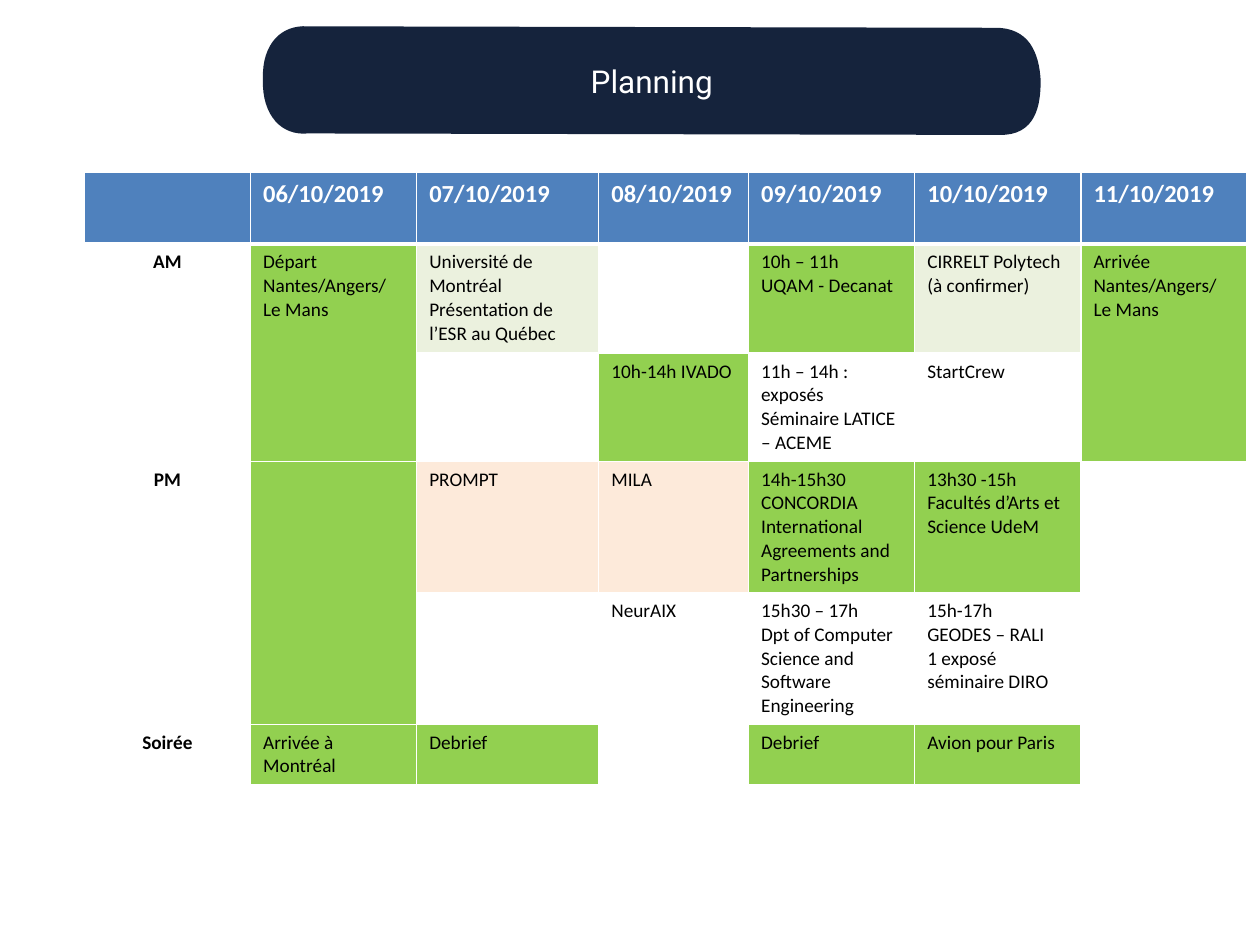
from lxml.etree import SubElement
from pptx import Presentation
from pptx.dml.color import RGBColor
from pptx.enum.text import MSO_ANCHOR, PP_ALIGN
from pptx.oxml.ns import qn
from pptx.util import Cm, Pt

THEME = {
    "navy": "15233C", "header": "4F81BD", "white": "FFFFFF", "black": "000000",
    "confirmed": "92D050", "tentative": "EBF1DE", "proposed": "FDEADA",
    "title_font": "Roboto", "table_font": "Calibri",
    "title_size": 18, "header_size": 14, "body_size": 11,
}

# Content
TITLE = "Planning"
DATES = [f"{day:02}/10/2019" for day in range(6, 12)]
PERIODS = {1: "AM", 3: "PM", 5: "Soirée"}  # first table row: label
# (row, column, status, paragraphs)
EVENTS = [
    (1, 1, "confirmed", ["Départ Nantes/Angers/", "Le Mans"]),
    (1, 2, "tentative", ["Université de Montréal", "Présentation de l’ESR au Québec"]),
    (1, 4, "confirmed", ["10h – 11h", "UQAM - Decanat"]),
    (1, 5, "tentative", ["CIRRELT Polytech", "(à confirmer)"]),
    (1, 6, "confirmed", ["Arrivée Nantes/Angers/", "Le Mans"]),
    (2, 3, "confirmed", ["10h-14h IVADO"]),
    (2, 4, None, ["11h – 14h : exposés Séminaire LATICE – ACEME"]),
    (2, 5, None, ["StartCrew"]),
    (3, 1, "confirmed", []),
    (3, 2, "proposed", ["PROMPT"]),
    (3, 3, "proposed", ["MILA"]),
    (3, 4, "confirmed", ["14h-15h30", "CONCORDIA", "International Agreements and Partnerships"]),
    (3, 5, "confirmed", ["13h30 -15h Facultés d’Arts et Science UdeM"]),
    (4, 3, None, ["NeurAIX"]),
    (4, 4, None, ["15h30 – 17h", "Dpt of Computer Science and Software Engineering"]),
    (4, 5, None, ["15h-17h", "GEODES – RALI", "1 exposé séminaire DIRO"]),
    (5, 1, "confirmed", ["Arrivée à Montréal"]),
    (5, 2, "confirmed", ["Debrief"]),
    (5, 4, "confirmed", ["Debrief"]),
    (5, 5, "confirmed", ["Avion pour Paris"]),
]
TWO_ROW_CELLS = [(1, 0), (1, 1), (1, 6), (3, 0), (3, 1)]

# Geometry in centimetres
COLUMN_WIDTHS = [3.35, 3.35, 3.67, 3.02, 3.35, 3.35, 3.35]
ROW_HEIGHTS = [1.44, 2.2, 2.18, 2.64, 2.64, 1.2]
TABLE_LEFT, TABLE_TOP = 1.7, 3.48
BANNER_START = (5.3, 1.6)
# One point is a straight side, three points are a Bézier curve
BANNER_SIDES = [
    [(5.28, 0.86), (5.69, 0.5), (6.2, 0.53)],
    [(20.07, 0.56)],
    [(20.73, 0.56), (20.95, 1.04), (20.98, 1.63)],
    [(20.98, 2.13), (20.88, 2.74), (20.14, 2.72)],
    [(6.2, 2.69)],
    [(5.69, 2.74), (5.28, 2.34), BANNER_START],
]
CURVE_STEPS = 16


def color(name):
    return RGBColor.from_string(THEME[name])


def write(paragraph, text, font, size, color_name, bold=False):
    run = paragraph.add_run()
    run.text = text
    run.font.name = THEME[font]
    run.font.size = Pt(THEME[size])
    run.font.color.rgb = color(color_name)
    run.font.bold = bold


def outline_points(start, sides):
    points = [start]
    for side in sides:
        if len(side) == 1:
            points += side
            continue
        corners = [points[-1], *side]
        for step in range(1, CURVE_STEPS + 1):
            t = step / CURVE_STEPS
            weights = ((1 - t) ** 3, 3 * t * (1 - t) ** 2, 3 * t * t * (1 - t), t ** 3)
            points.append(tuple(
                sum(weight * corner[axis] for weight, corner in zip(weights, corners))
                for axis in (0, 1)))
    return [(Cm(x), Cm(y)) for x, y in points]


def add_banner(slide):
    first, *others = outline_points(BANNER_START, BANNER_SIDES)
    builder = slide.shapes.build_freeform(*first)
    builder.add_line_segments(others, close=True)
    shape = builder.convert_to_shape()
    shape.shadow.inherit = False
    shape.fill.solid()
    shape.fill.fore_color.rgb = color("navy")
    shape.line.fill.background()
    shape.text_frame.vertical_anchor = MSO_ANCHOR.MIDDLE
    paragraph = shape.text_frame.paragraphs[0]
    paragraph.alignment = PP_ALIGN.CENTER
    write(paragraph, TITLE, "title_font", "title_size", "white")


def set_borders(cell, top, bottom):
    properties = cell._tc.get_or_add_tcPr()
    for side, width in (("L", 1), ("R", 1), ("T", top), ("B", bottom)):
        line = SubElement(properties, qn(f"a:ln{side}"), w=str(Pt(width)))
        fill = SubElement(line, qn("a:solidFill"))
        SubElement(fill, qn("a:srgbClr"), val=THEME["white"])


def add_planning(slide):
    frame = slide.shapes.add_table(
        len(ROW_HEIGHTS), len(COLUMN_WIDTHS), Cm(TABLE_LEFT), Cm(TABLE_TOP),
        Cm(sum(COLUMN_WIDTHS)), Cm(sum(ROW_HEIGHTS)))
    table = frame.table
    table.horz_banding = False
    for column, width in zip(table.columns, COLUMN_WIDTHS):
        column.width = Cm(width)
    for row, height in zip(table.rows, ROW_HEIGHTS):
        row.height = Cm(height)

    # Cell borders and base fills
    for row_index, row in enumerate(table.rows):
        for cell in row.cells:
            set_borders(cell, 3 if row_index == 1 else 1, 3 if row_index == 0 else 1)
            if row_index == 0:
                cell.fill.solid()
                cell.fill.fore_color.rgb = color("header")
            else:
                cell.fill.background()
    for row_index, column_index in TWO_ROW_CELLS:
        table.cell(row_index, column_index).merge(table.cell(row_index + 1, column_index))

    # Dates and periods
    for column_index, date in enumerate(DATES, start=1):
        paragraph = table.cell(0, column_index).text_frame.paragraphs[0]
        write(paragraph, date, "table_font", "header_size", "white", bold=True)
    for row_index, label in PERIODS.items():
        paragraph = table.cell(row_index, 0).text_frame.paragraphs[0]
        paragraph.alignment = PP_ALIGN.CENTER
        write(paragraph, label, "table_font", "body_size", "black", bold=True)

    # Events
    for row_index, column_index, status, lines in EVENTS:
        cell = table.cell(row_index, column_index)
        if status:
            cell.fill.solid()
            cell.fill.fore_color.rgb = color(status)
        text_frame = cell.text_frame
        for number, line in enumerate(lines):
            paragraph = text_frame.add_paragraph() if number else text_frame.paragraphs[0]
            write(paragraph, line, "table_font", "body_size", "black")


def main():
    presentation = Presentation()
    presentation.slide_width, presentation.slide_height = Cm(25.4), Cm(19.05)
    slide = presentation.slides.add_slide(presentation.slide_layouts[6])
    add_banner(slide)
    add_planning(slide)
    presentation.save("out.pptx")


if __name__ == "__main__":
    main()
